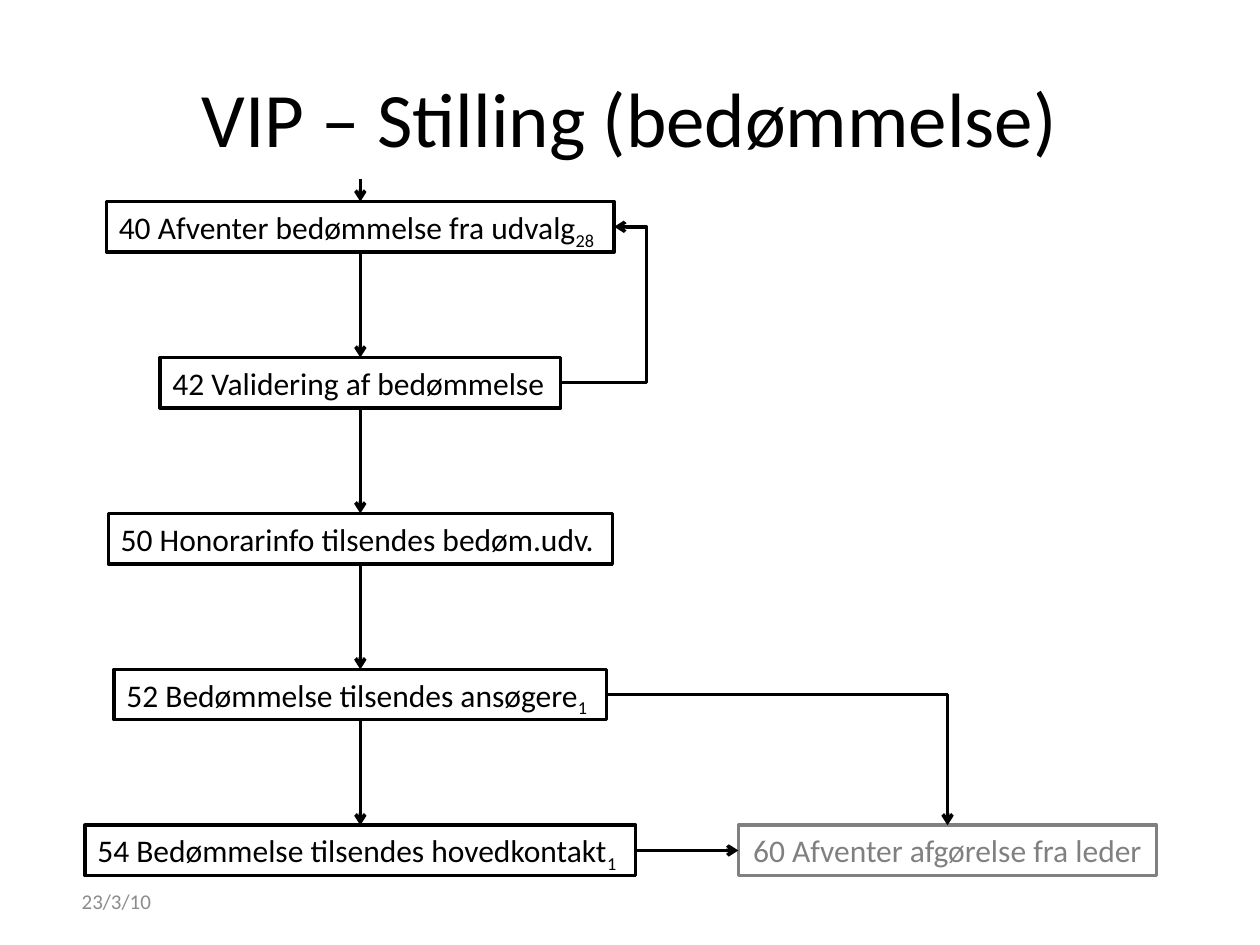
"""Build the flow chart slide for the assessment of a VIP position."""
import pptx
import pptx.dml.color
import pptx.enum.shapes
import pptx.enum.text
import pptx.oxml.ns
import pptx.util
from lxml import etree

Inches = pptx.util.Inches
Pt = pptx.util.Pt
PP_ALIGN = pptx.enum.text.PP_ALIGN
ANCHOR = pptx.enum.text.MSO_ANCHOR
LINK = pptx.enum.shapes.MSO_CONNECTOR
qn = pptx.oxml.ns.qn

TITLE = "VIP – Stilling (bedømmelse)"
DATE = "23/3/10"
STEPS = [
    ("40 Afventer bedømmelse fra udvalg", "28", 4.03),
    ("42 Validering af bedømmelse", "", 3.18),
    ("50 Honorarinfo tilsendes bedøm.udv.", "", 4.0),
    ("52 Bedømmelse tilsendes ansøgere", "1", 3.91),
    ("54 Bedømmelse tilsendes hovedkontakt", "1", 4.37),
]
NEXT_STEP = ("60 Afventer afgørelse fra leder", "", 3.32)
BLACK, GRAY, DATE_GRAY = "000000", "808080", "8C8C8C"
MID_X, NEXT_X = 2.86, 7.52
TOP, BOTTOM, BOX_H = 1.6, 6.55, 0.4
ENTRY_Y = 1.42
LOOP_X = 5.13


def rgb(color):
    return pptx.dml.color.RGBColor.from_string(color)


def write(sp, text, size, color, align, anchor, sub="", wrap=True):
    tf = sp.text_frame
    tf.word_wrap = wrap
    tf.vertical_anchor = anchor
    p = tf.paragraphs[0]
    p.alignment = align
    p.font.name, p.font.size = "Calibri", Pt(size)
    p.font.color.rgb = rgb(color)
    for part, baseline in ((text, 0), (sub, -25000)):
        if part:
            r = p.add_run()
            r.text = part
            r.font.name, r.font.size = "Calibri", Pt(size)
            r.font.color.rgb = rgb(color)
            if baseline:
                r._r.get_or_add_rPr().set("baseline", str(baseline))


def add_text(s, box, text, size, color, align):
    sp = s.shapes.add_textbox(*map(Inches, box))
    write(sp, text, size, color, align, ANCHOR.MIDDLE)


def add_step(s, step, mid_x, y, color=BLACK, align=PP_ALIGN.LEFT):
    text, sub, w = step
    sp = s.shapes.add_shape(
        pptx.enum.shapes.MSO_SHAPE.FLOWCHART_PROCESS,
        Inches(mid_x - w / 2), Inches(y), Inches(w), Inches(BOX_H))
    sp.shadow.inherit = False
    sp.fill.background()
    sp.line.color.rgb = rgb(color)
    sp.line.width = Pt(2)
    write(sp, text, 18, color, align, ANCHOR.TOP, sub, wrap=False)


def add_arrow(s, start, end, kind=LINK.STRAIGHT, preset=None, adj=None):
    cn = s.shapes.add_connector(kind, *map(Inches, start + end))
    cn.line.color.rgb = rgb(BLACK)
    cn.line.width = Pt(2)
    spPr = cn._element.spPr
    etree.SubElement(cn.line._get_or_add_ln(), qn("a:tailEnd"), type="arrow")
    etree.SubElement(spPr, qn("a:effectLst"))
    geom = spPr.find(qn("a:prstGeom"))
    if preset:
        geom.set("prst", preset)
    if adj is not None:
        etree.SubElement(geom.find(qn("a:avLst")), qn("a:gd"),
                         name="adj1", fmla=f"val {round(adj * 100000)}")


def main():
    prs = pptx.Presentation()
    prs.slide_width, prs.slide_height = Inches(10), Inches(7.5)
    s = prs.slides.add_slide(prs.slide_layouts[6])
    add_text(s, (0.5, 0.3, 9, 1.25), TITLE, 44, BLACK, PP_ALIGN.CENTER)
    add_text(s, (0.55, 6.95, 2.33, 0.4), DATE, 12, DATE_GRAY, PP_ALIGN.LEFT)

    gap = (BOTTOM - TOP) / (len(STEPS) - 1)
    tops = [TOP + i * gap for i in range(len(STEPS))]
    mids = [y + BOX_H / 2 for y in tops]
    rights = [MID_X + w / 2 for _, _, w in STEPS]
    starts = [ENTRY_Y] + [y + BOX_H for y in tops[:-1]]
    for step, start, y in zip(STEPS, starts, tops):
        add_step(s, step, MID_X, y)
        add_arrow(s, (MID_X, start), (MID_X, y))
    add_step(s, NEXT_STEP, NEXT_X, BOTTOM, GRAY, PP_ALIGN.CENTER)

    add_arrow(s, (rights[4], mids[4]), (NEXT_X - NEXT_STEP[2] / 2, mids[4]))
    add_arrow(s, (rights[1], mids[1]), (rights[0], mids[0]), LINK.ELBOW,
              adj=(LOOP_X - rights[1]) / (rights[0] - rights[1]))
    add_arrow(s, (rights[3], mids[3]), (NEXT_X, BOTTOM), LINK.ELBOW,
              preset="bentConnector2")
    prs.save("out.pptx")


if __name__ == "__main__":
    main()
